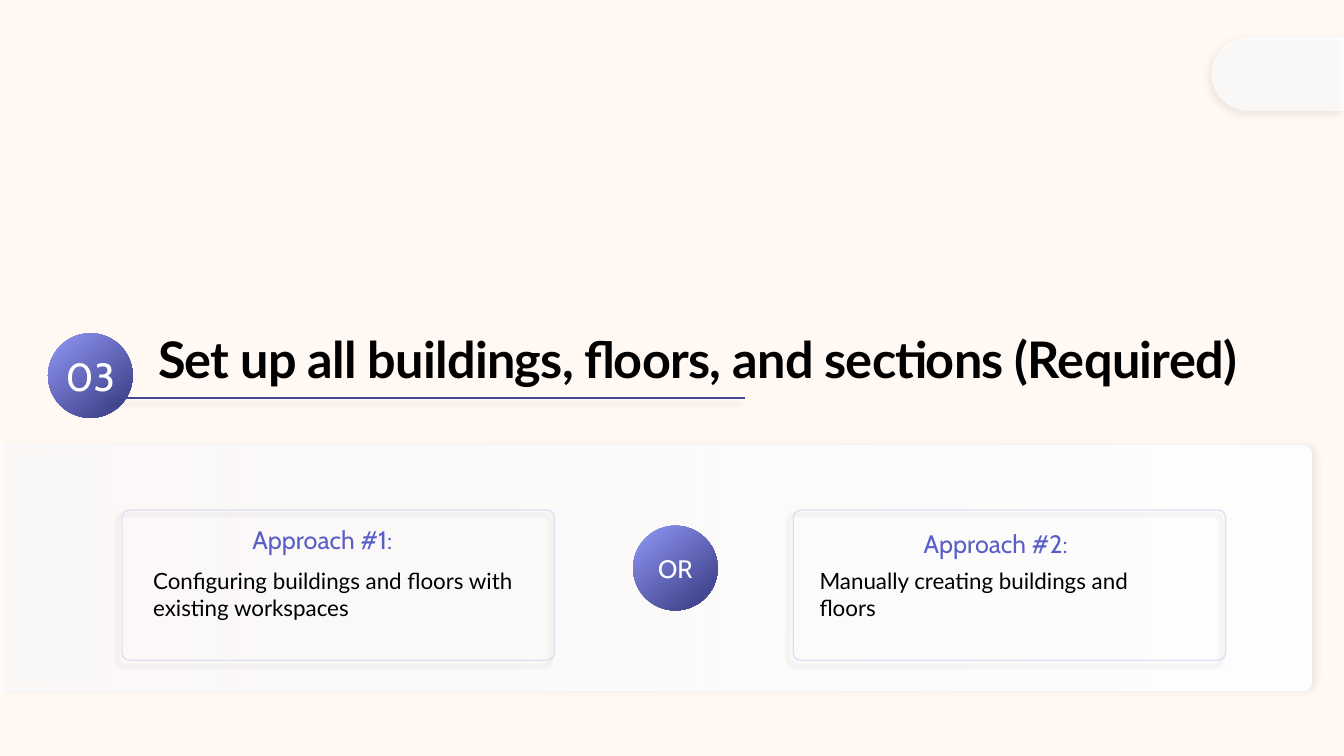
from dataclasses import dataclass

from lxml import etree
from pptx import Presentation
from pptx import util as u
from pptx.dml.color import RGBColor
from pptx.enum import shapes, text
from pptx.oxml.ns import qn

Pt = u.Pt

CREAM = RGBColor(0xFF, 0xF8, 0xF3)
WHITE = RGBColor(0xFF, 0xFF, 0xFF)
BLACK = RGBColor(0x00, 0x00, 0x00)
PERIWINKLE = RGBColor(0x92, 0x99, 0xF7)
INDIGO = RGBColor(0x44, 0x47, 0x91)
VIOLET = RGBColor(0x5A, 0x5F, 0xC7)
LAVENDER = RGBColor(0xDE, 0xDF, 0xF4)


@dataclass(frozen=True)
class Shadow:
    alpha: int
    blur: float
    distance: float
    angle: int


@dataclass(frozen=True)
class Badge:
    label: str
    left: float
    top: float
    size: float


@dataclass(frozen=True)
class Approach:
    heading: str
    detail: str
    frame_left: float
    heading_top: float
    detail_left: float
    detail_width: float


PANEL_SHADOW = Shadow(5, 4, 3, 0)
TAB_SHADOW = Shadow(10, 6, 3, 135)
LINE_SHADOW = Shadow(13, 3, 5, 135)

BADGE_SIZE = 60.5
BADGES = [Badge("03", 34.3, 238, 28), Badge("OR", 452.2, 375.5, 18)]

FRAME_TOP, FRAME_WIDTH, FRAME_HEIGHT = 364.3, 308.9, 107.3
HEADING_INDENT = 86.1
DETAIL_TOP = 405.4
APPROACHES = [
    Approach("Approach #1:", "Configuring buildings and floors with existing workspaces",
             87.1, 370.8, 109.4, 262),
    Approach("Approach #2:", "Manually creating buildings and floors",
             566.6, 373.7, 585.4, 246.2),
]


def write(frame, words: str, *, font: str, size: float, color: RGBColor,
          bold: bool = False, align=text.PP_ALIGN.LEFT, anchor=text.MSO_ANCHOR.TOP,
          wrap: bool = True, inset: tuple = (0, 0), line_spacing: float = 1.0,
          tracking: float = 0) -> None:
    """Fill a text frame with one formatted paragraph."""
    frame.auto_size = text.MSO_AUTO_SIZE.NONE
    frame.word_wrap = wrap
    frame.vertical_anchor = anchor
    frame.margin_left = frame.margin_right = Pt(inset[0])
    frame.margin_top = frame.margin_bottom = Pt(inset[1])
    paragraph = frame.paragraphs[0]
    paragraph.alignment = align
    paragraph.line_spacing = line_spacing
    paragraph.space_before = Pt(0)
    run = paragraph.add_run()
    run.text = words
    run.font.name, run.font.size, run.font.bold = font, Pt(size), bold
    run.font.color.rgb = color
    if tracking:
        run.font._element.set("spc", str(round(tracking * 100)))


def set_alpha(color_element, percent: int) -> None:
    etree.SubElement(color_element, qn("a:alpha")).set("val", str(percent * 1000))


def cast_shadow(shape, shadow: Shadow) -> None:
    """Add an outer shadow; fill and line must already be set."""
    properties = shape._element.spPr
    for old in properties.findall(qn("a:effectLst")):
        properties.remove(old)
    effects = etree.SubElement(properties, qn("a:effectLst"))
    outer = etree.SubElement(effects, qn("a:outerShdw"), {
        "blurRad": str(Pt(shadow.blur)), "dist": str(Pt(shadow.distance)),
        "dir": str(shadow.angle * 60000), "algn": "ctr", "rotWithShape": "0"})
    set_alpha(etree.SubElement(outer, qn("a:srgbClr"), {"val": str(BLACK)}), shadow.alpha)


def fill_gradient(shape, stops: list, clockwise: int) -> None:
    shape.fill.gradient()
    shape.fill.gradient_angle = 360 - clockwise
    for stop, (position, color) in zip(shape.fill.gradient_stops, stops):
        stop.position, stop.color.rgb = position, color


def add_plain(slide, kind, left: float, top: float, width: float, height: float):
    shape = slide.shapes.add_shape(kind, Pt(left), Pt(top), Pt(width), Pt(height))
    shape.shadow.inherit = False
    shape.line.fill.background()
    return shape


def add_edge_tab(slide, left: float, top: float, width: float, height: float,
                 rotation: int, rounding: float):
    """Add a block with two rounded corners, turned to grow from a slide edge."""
    shift = (width - height) / 2
    tab = add_plain(slide, shapes.MSO_SHAPE.ROUND_2_SAME_RECTANGLE,
                    left + shift, top - shift, height, width)
    tab.rotation = rotation
    tab.adjustments[0], tab.adjustments[1] = rounding, 0
    return tab


def add_badge(slide, badge: Badge) -> None:
    circle = add_plain(slide, shapes.MSO_SHAPE.OVAL, badge.left, badge.top,
                       BADGE_SIZE, BADGE_SIZE)
    fill_gradient(circle, [(0, PERIWINKLE), (0.83, INDIGO)], 50)
    write(circle.text_frame, badge.label, font="Cabin", size=badge.size, color=WHITE,
          align=text.PP_ALIGN.CENTER, anchor=text.MSO_ANCHOR.MIDDLE, wrap=False)


def add_approach(slide, approach: Approach) -> None:
    heading = slide.shapes.add_textbox(
        Pt(approach.frame_left + HEADING_INDENT), Pt(approach.heading_top), Pt(136.8), Pt(28.8))
    write(heading.text_frame, approach.heading, font="Cabin", size=18, color=VIOLET,
          inset=(7.2, 3.6))
    detail = slide.shapes.add_textbox(
        Pt(approach.detail_left), Pt(DETAIL_TOP), Pt(approach.detail_width), Pt(38.9))
    write(detail.text_frame, approach.detail, font="Lato", size=16, color=BLACK)

    frame = add_plain(slide, shapes.MSO_SHAPE.ROUNDED_RECTANGLE, approach.frame_left,
                      FRAME_TOP, FRAME_WIDTH, FRAME_HEIGHT)
    frame.adjustments[0] = 0.05
    frame.fill.background()
    frame.line.color.rgb, frame.line.width = LAVENDER, Pt(1)
    cast_shadow(frame, LINE_SHADOW)


def main() -> None:
    deck = Presentation()
    deck.slide_width, deck.slide_height = Pt(960), Pt(540)
    slide = deck.slides.add_slide(deck.slide_layouts.get_by_name("Title Only"))
    slide.background.fill.solid()
    slide.background.fill.fore_color.rgb = CREAM

    # Lower panel, fading towards the left edge
    panel = add_edge_tab(slide, 0, 318.2, 936.7, 175, 90, 0.04)
    fill_gradient(panel, [(0, WHITE), (1, WHITE)], 90)
    set_alpha(panel._element.spPr.findall(".//" + qn("a:srgbClr"))[-1], 64)
    cast_shadow(panel, PANEL_SHADOW)

    # Title
    title = slide.shapes.title
    title.left, title.top, title.width, title.height = Pt(113), Pt(199.4), Pt(805), Pt(78.5)
    write(title.text_frame, "Set up all buildings, floors, and sections (Required)",
          font="Lato", size=36, color=BLACK, bold=True, anchor=text.MSO_ANCHOR.BOTTOM,
          line_spacing=0.9, tracking=-0.5)

    # Corner tab
    corner = add_edge_tab(slide, 865.4, 26.6, 94.6, 52.6, 270, 0.5)
    corner.fill.solid()
    corner.fill.fore_color.rgb = WHITE
    set_alpha(corner._element.spPr.find(".//" + qn("a:srgbClr")), 74)
    cast_shadow(corner, TAB_SHADOW)

    # Step number, title underline, approaches and the choice between them
    for badge in BADGES:
        add_badge(slide, badge)
    underline = slide.shapes.add_connector(
        shapes.MSO_CONNECTOR.STRAIGHT, Pt(76.3), Pt(284.4), Pt(532.1), Pt(284.4))
    underline.line.color.rgb, underline.line.width = INDIGO, Pt(1)
    cast_shadow(underline, LINE_SHADOW)
    for approach in APPROACHES:
        add_approach(slide, approach)

    deck.save("out.pptx")


if __name__ == "__main__":
    main()
